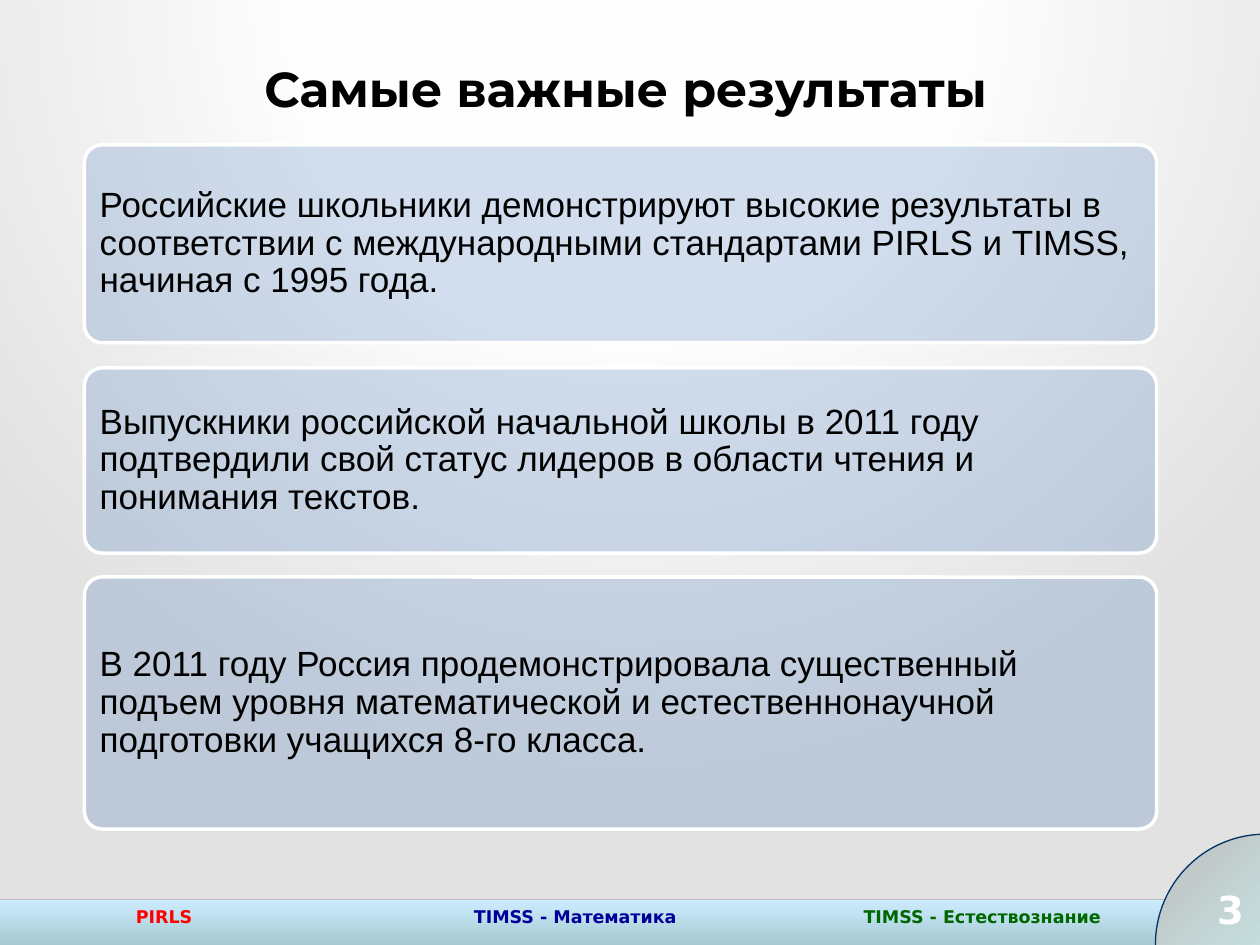
from typing import NamedTuple

from lxml import etree
from pptx import Presentation
from pptx.dml.color import RGBColor
from pptx.enum import shapes, text
from pptx.oxml.ns import qn
from pptx.util import Pt

PX = 9144  # EMU per px, 100 px to the inch
ALIGN, ANCHOR, SHAPE = text.PP_ALIGN, text.MSO_ANCHOR, shapes.MSO_SHAPE


class Box(NamedTuple):
    x: int
    y: int
    w: int
    h: int


class Label(NamedTuple):
    box: Box
    words: str
    size: int
    color: str
    font: str = "DejaVu Sans"
    align: ALIGN = ALIGN.CENTER
    anchor: ANCHOR = ANCHOR.TOP


class Card(NamedTuple):
    y: int
    h: int
    words: str


LABELS = [
    Label(Box(75, 8, 843, 123), "Самые важные результаты", 28, "000000",
          "Montserrat", anchor=ANCHOR.MIDDLE),
    Label(Box(98, 714, 79, 34), "PIRLS", 10, "FF0000", align=ALIGN.LEFT),
    Label(Box(303, 714, 307, 47), "TIMSS - Математика", 10, "000099"),
    Label(Box(626, 714, 307, 47), "TIMSS - Естествознание", 10, "006600"),
    Label(Box(917, 698, 80, 47), "3", 22, "FFFFFF", align=ALIGN.RIGHT),
]
CARDS = [
    Card(115, 157, "Российские школьники демонстрируют высокие результаты в "
         "соответствии с международными стандартами PIRLS и TIMSS, начиная с 1995 года."),
    Card(292, 147, "Выпускники российской начальной школы в 2011 году "
         "подтвердили свой статус лидеров в области чтения и понимания текстов."),
    Card(458, 200, "В 2011 году Россия продемонстрировала существенный подъем "
         "уровня математической и естественнонаучной подготовки учащихся 8-го класса."),
]
CARD_X, CARD_W, CARD_RADIUS, CARD_INSET = 67, 851, 14, 8


def rgb(color: str) -> RGBColor:
    return RGBColor.from_string(color)


def emu(box: Box) -> list[int]:
    return [v * PX for v in box]


def set_gradient(fill, owner, stops: dict[int, str], angle: int = 0):
    """Give the fill its stops and angle, and return its gradFill element."""
    fill.gradient()
    grad = next(owner.iter(qn("a:gradFill")))
    for child in list(grad):
        grad.remove(child)
    gs_list = etree.SubElement(grad, qn("a:gsLst"))
    for pos, color in stops.items():
        gs = etree.SubElement(gs_list, qn("a:gs"), pos=str(pos * 1000))
        etree.SubElement(gs, qn("a:srgbClr"), val=color)
    etree.SubElement(grad, qn("a:lin"), ang=str(angle * 60000), scaled="0")
    return grad


def set_background(slide) -> None:
    grad = set_gradient(slide.background.fill, slide.element,
                        {0: "FFFFFF", 40: "FEFEFE", 100: "7F7F7F"})
    grad.remove(grad.find(qn("a:lin")))
    circle = etree.SubElement(grad, qn("a:path"), path="circle")
    etree.SubElement(circle, qn("a:fillToRect"), l="50000", t="-80000",
                     r="50000", b="180000")


def add_shape(slide, kind: SHAPE, box: Box, line: str = "", width: float = 0):
    sp = slide.shapes.add_shape(kind, *emu(box))
    sp.shadow.inherit = False
    if line:
        sp.line.color.rgb = rgb(line)
        sp.line.width = Pt(width)
    else:
        sp.line.fill.background()
    return sp


def set_tint(sp, color: str, alpha: int) -> None:
    sp.fill.solid()
    sp.fill.fore_color.rgb = rgb(color)
    clr = next(sp.element.spPr.iter(qn("a:srgbClr")))
    etree.SubElement(clr, qn("a:alpha"), val=str(alpha * 1000))


def write(tf, words: str, align: ALIGN, anchor: ANCHOR, color: str, **font):
    tf.word_wrap = True
    tf.vertical_anchor = anchor
    p = tf.paragraphs[0]
    p.alignment = align
    r = p.add_run()
    r.text = words
    r.font.color.rgb = rgb(color)
    for name, value in font.items():
        setattr(r.font, name, value)
    return p


def add_label(slide, label: Label) -> None:
    tf = slide.shapes.add_textbox(*emu(label.box)).text_frame
    write(tf, label.words, label.align, label.anchor, label.color,
          name=label.font, size=Pt(label.size), bold=True)


def add_card(slide, card: Card) -> None:
    sp = add_shape(slide, SHAPE.ROUNDED_RECTANGLE,
                   Box(CARD_X, card.y, CARD_W, card.h), "FFFFFF", 2)
    sp.adjustments[0] = CARD_RADIUS / card.h
    set_tint(sp, "4F81BD", 25)
    tf = sp.text_frame
    for side in ("left", "top", "right", "bottom"):
        setattr(tf, f"margin_{side}", CARD_INSET * PX)
    p = write(tf, card.words, ALIGN.LEFT, ANCHOR.MIDDLE, "000000",
              name="Arial", size=Pt(20))
    p.line_spacing = 0.9


def main() -> None:
    prs = Presentation()
    prs.slide_width, prs.slide_height = 1000 * PX, 750 * PX
    slide = prs.slides.add_slide(prs.slide_layouts[6])

    # Backdrop: gradient, footer bar, white veil, page number disc
    set_background(slide)
    bar = add_shape(slide, SHAPE.RECTANGLE, Box(0, 714, 996, 55))
    set_gradient(bar.fill, bar.element, {0: "CCECFF", 100: "92B6B6"}, 90)
    veil = add_shape(slide, SHAPE.RECTANGLE, Box(0, 0, 1000, 714))
    set_tint(veil, "FFFFFF", 78)
    disc = add_shape(slide, SHAPE.OVAL, Box(917, 662, 175, 175), "003366", 0.75)
    set_gradient(disc.fill, disc.element, {0: "BFBFBF", 100: "CCFFFF"}, 45)

    # Title, footer labels and page number
    for label in LABELS:
        add_label(slide, label)

    # Result cards
    for card in CARDS:
        add_card(slide, card)

    prs.save("out.pptx")


if __name__ == "__main__":
    main()
